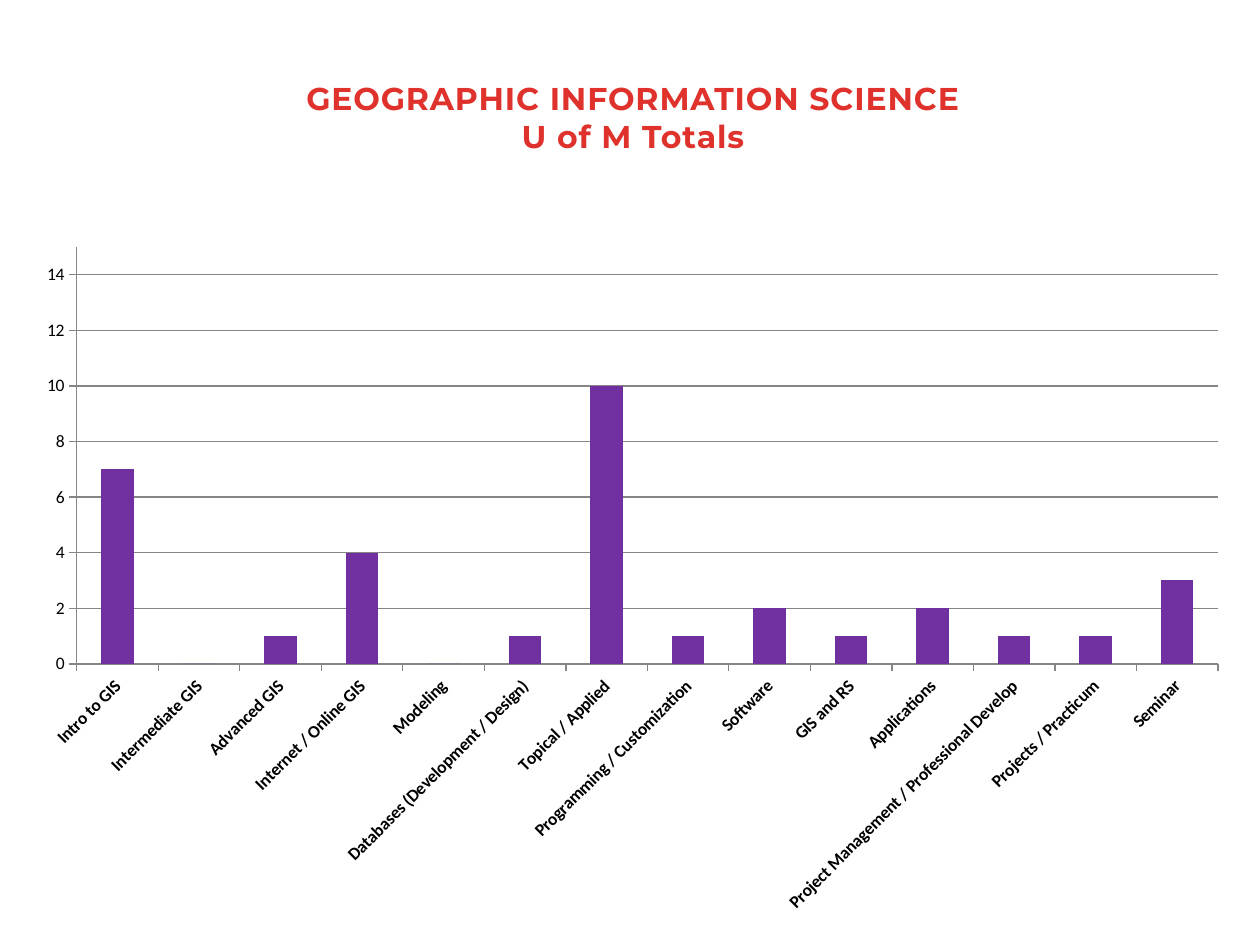
from pptx import Presentation
from pptx.chart.data import CategoryChartData
from pptx.dml.color import RGBColor
from pptx.enum.chart import XL_CHART_TYPE, XL_TICK_MARK
from pptx.enum.text import PP_ALIGN
from pptx.util import Pt

COLUMN = XL_CHART_TYPE.COLUMN_CLUSTERED
OUTSIDE = XL_TICK_MARK.OUTSIDE
CENTER = PP_ALIGN.CENTER
PX = 9144


def color(value):
    return RGBColor.from_string(value)


def add_text(page, lines, left, top, width, height, font, size, fill, bold, spacing):
    box = page.shapes.add_textbox(left * PX, top * PX, width * PX, height * PX)
    frame = box.text_frame
    frame.word_wrap = True
    for index, line in enumerate(lines):
        para = frame.paragraphs[0] if index == 0 else frame.add_paragraph()
        para.alignment = CENTER
        span = para.add_run()
        span.text = line
        span.font.name = font
        span.font.size = Pt(size)
        span.font.bold = bold
        span.font.color.rgb = color(fill)
        span.font._element.set("spc", str(spacing))


deck = Presentation()
deck.slide_width = 1000 * PX
deck.slide_height = 750 * PX
page = deck.slides.add_slide(deck.slide_layouts[6])

courses = {
    "Intro to GIS": 7,
    "Intermediate GIS": 0,
    "Advanced GIS": 1,
    "Internet / Online GIS": 4,
    "Modeling": 0,
    "Databases (Development / Design)": 1,
    "Topical / Applied": 10,
    "Programming / Customization": 1,
    "Software": 2,
    "GIS and RS": 1,
    "Applications": 2,
    "Project Management / Professional Develop": 1,
    "Projects / Practicum": 1,
    "Seminar": 3,
}
data = CategoryChartData()
data.categories = list(courses)
data.add_series("Series 1", list(courses.values()))

chart = page.shapes.add_chart(
    COLUMN, 18 * PX, 185 * PX, 968 * PX, 550 * PX, data
).chart
chart.has_legend = False
chart.has_title = False
chart.font.name = "Calibri"
chart.font.size = Pt(10)
chart.font.color.rgb = color("000000")

plot = chart.plots[0]
plot.gap_width = 150
plot.vary_by_categories = False
bars = plot.series[0].format.fill
bars.solid()
bars.fore_color.rgb = color("7030A0")

course_axis = chart.category_axis
count_axis = chart.value_axis
count_axis.minimum_scale = 0
count_axis.maximum_scale = 15
count_axis.major_unit = 2
count_axis.has_major_gridlines = True
course_axis.tick_labels.font.bold = True
course_axis.tick_labels.font.size = Pt(10)
course_axis._element.txPr.bodyPr.set("rot", "-2700000")
for axis in (course_axis, count_axis):
    axis.major_tick_mark = OUTSIDE
for part in (course_axis, count_axis, count_axis.major_gridlines):
    part.format.line.color.rgb = color("868686")
    part.format.line.width = Pt(0.75)

add_text(
    page,
    ["GEOGRAPHIC INFORMATION SCIENCE", "U of M Totals"],
    left=176, top=58, width=653, height=71,
    font="Montserrat", size=18, fill="E0322D", bold=True, spacing=50,
)

deck.save("out.pptx")
